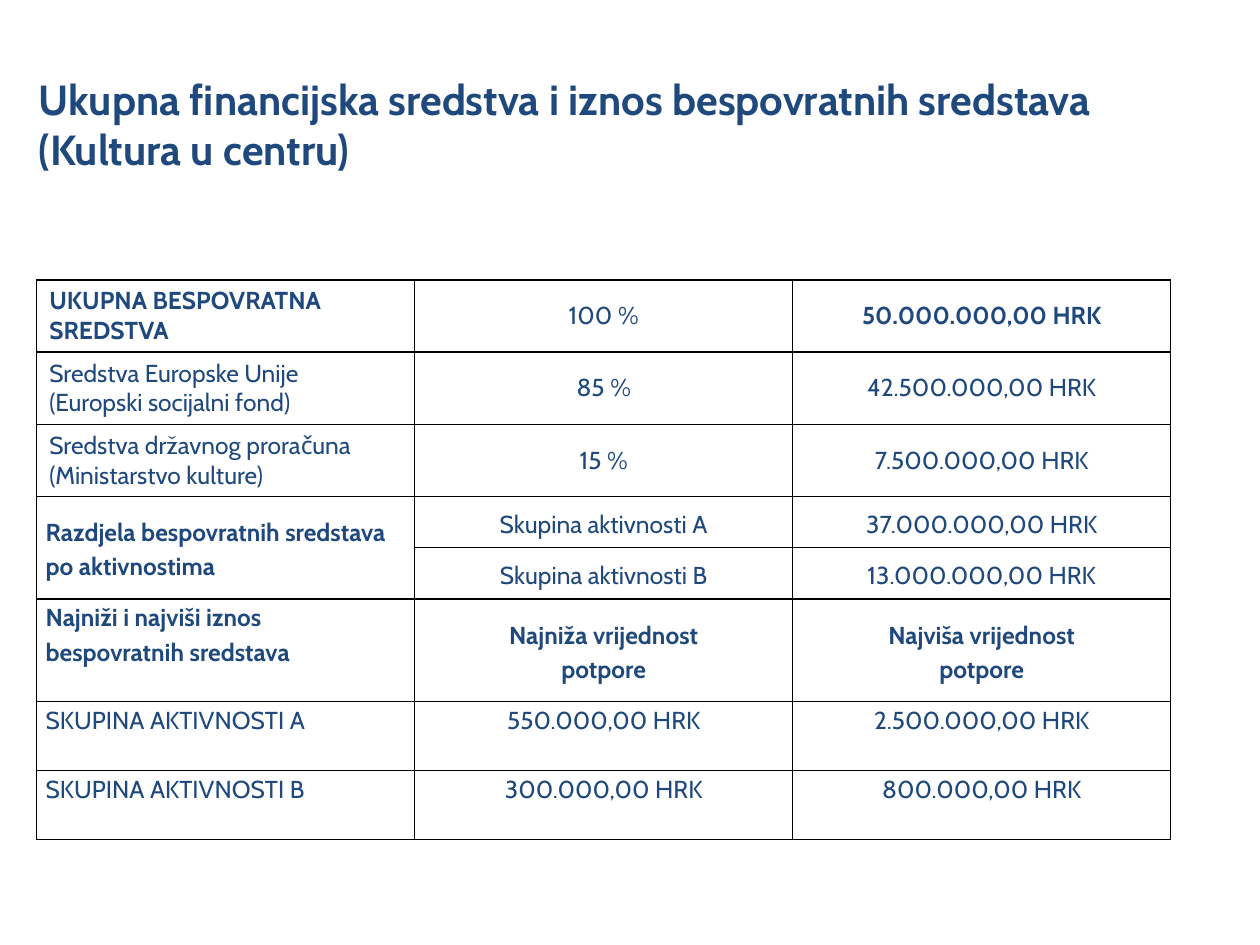
"""Build the slide on total funds and grant amounts."""
from dataclasses import dataclass

from lxml.etree import SubElement
from pptx import Presentation
from pptx.dml.color import RGBColor
from pptx.enum.text import MSO_ANCHOR, MSO_AUTO_SIZE, PP_ALIGN
from pptx.oxml.ns import qn
from pptx.slide import Slide
from pptx.table import _Cell
from pptx.text.text import TextFrame
from pptx.util import Cm, Pt

NAVY = "1F497D"
BLACK = "000000"
TABLE_LEFT, TABLE_TOP, COLUMN_WIDTH = 0.74, 5.64, 7.62
TIGHT_MARGINS = {
    "margin_left": Cm(0.18),
    "margin_right": Cm(0.18),
    "margin_top": Cm(0),
    "margin_bottom": Cm(0),
}


@dataclass
class TableRow:
    height: float
    texts: tuple[str, str, str]
    bold: tuple[bool, bool, bool] = (False, False, False)
    tight: bool = True
    top_columns: tuple[int, ...] = ()


ROWS = [
    TableRow(1.45, ("UKUPNA BESPOVRATNA SREDSTVA", "100 %", "50.000.000,00 HRK"),
             bold=(True, False, True), tight=False),
    TableRow(1.45, ("Sredstva Europske Unije\n(Europski socijalni fond)", "85 %",
                    "42.500.000,00 HRK"), tight=False),
    TableRow(1.45, ("Sredstva državnog proračuna\n(Ministarstvo kulture)", "15 %",
                    "7.500.000,00 HRK"), tight=False),
    TableRow(1.03, ("Razdjela bespovratnih sredstava po aktivnostima", "Skupina aktivnosti A",
                    "37.000.000,00 HRK"), bold=(True, False, False)),
    TableRow(1.03, ("", "Skupina aktivnosti B", "13.000.000,00 HRK")),
    TableRow(2.07, ("Najniži i najviši iznos bespovratnih sredstava",
                    "Najniža vrijednost\npotpore", "Najviša vrijednost\npotpore"),
             bold=(True, True, True), top_columns=(0,)),
    TableRow(1.39, ("SKUPINA AKTIVNOSTI A", "550.000,00 HRK", "2.500.000,00 HRK"),
             top_columns=(0, 1, 2)),
    TableRow(1.39, ("SKUPINA AKTIVNOSTI B", "300.000,00 HRK", "800.000,00 HRK"),
             top_columns=(0, 1, 2)),
]
MERGED_ROWS = (3, 4)


def color(value: str) -> RGBColor:
    """Turn a hex string into a colour."""
    return RGBColor.from_string(value)


def apply_format(target: object, values: dict) -> None:
    """Set each named attribute on the target."""
    for name, value in values.items():
        setattr(target, name, value)


def write_text(frame: TextFrame, text: str, size: float, bold: bool,
               paragraph_format: dict) -> None:
    """Fill a text frame, one paragraph per line, in the slide's font."""
    frame.text = text
    for para in frame.paragraphs:
        apply_format(para, paragraph_format)
        for span in para.runs:
            apply_format(span.font, {"name": "Cabin", "size": Pt(size), "bold": bold})
            span.font.color.rgb = color(NAVY)


def draw_borders(cell: _Cell) -> None:
    """Give a cell thin black lines on all four sides."""
    properties = cell._tc.get_or_add_tcPr()
    for side in ("a:lnL", "a:lnR", "a:lnT", "a:lnB"):
        line = SubElement(properties, qn(side), w=str(Pt(1)))
        fill = SubElement(line, qn("a:solidFill"))
        SubElement(fill, qn("a:srgbClr"), val=BLACK)


def add_title(page: Slide, text: str) -> None:
    """Place and format the title placeholder."""
    box = page.shapes.title
    apply_format(box, {"left": Cm(0.53), "top": Cm(1.35),
                       "width": Cm(22.86), "height": Cm(3.18)})
    write_text(box.text_frame, text, 24, True, {"alignment": PP_ALIGN.LEFT})
    apply_format(box.text_frame, {"vertical_anchor": MSO_ANCHOR.TOP, "word_wrap": True,
                                  "auto_size": MSO_AUTO_SIZE.NONE})


def fill_cell(cell: _Cell, row: TableRow, column: int) -> None:
    """Format one cell and write its text."""
    draw_borders(cell)
    cell.fill.background()
    on_top = column in row.top_columns
    cell.vertical_anchor = MSO_ANCHOR.TOP if on_top else MSO_ANCHOR.MIDDLE
    if row.tight:
        apply_format(cell, TIGHT_MARGINS)
    paragraph_format = {
        "alignment": PP_ALIGN.CENTER if column else PP_ALIGN.LEFT,
        "line_spacing": 1.15 if row.tight else 1.0,
    }
    write_text(cell.text_frame, row.texts[column], 14, row.bold[column], paragraph_format)


def add_funds_table(page: Slide, rows: list[TableRow]) -> None:
    """Draw the funds table with its merged heading cell."""
    count = len(rows[0].texts)
    height = sum(row.height for row in rows)
    table = page.shapes.add_table(len(rows), count, Cm(TABLE_LEFT), Cm(TABLE_TOP),
                                  Cm(COLUMN_WIDTH * count), Cm(height)).table
    apply_format(table, {"first_row": False, "horz_banding": False})
    for index, row in enumerate(rows):
        table.rows[index].height = Cm(row.height)
        for column in range(count):
            fill_cell(table.cell(index, column), row, column)
    first, last = MERGED_ROWS
    table.cell(first, 0).merge(table.cell(last, 0))


def main() -> None:
    """Create the deck and save it."""
    deck = Presentation()
    apply_format(deck, {"slide_width": Cm(25.4), "slide_height": Cm(19.05)})
    page = deck.slides.add_slide(deck.slide_layouts.get_by_name("Title Only"))
    add_title(page, "Ukupna financijska sredstva i iznos bespovratnih sredstava "
                    "(Kultura u centru)")
    add_funds_table(page, ROWS)
    deck.save("out.pptx")


if __name__ == "__main__":
    main()
